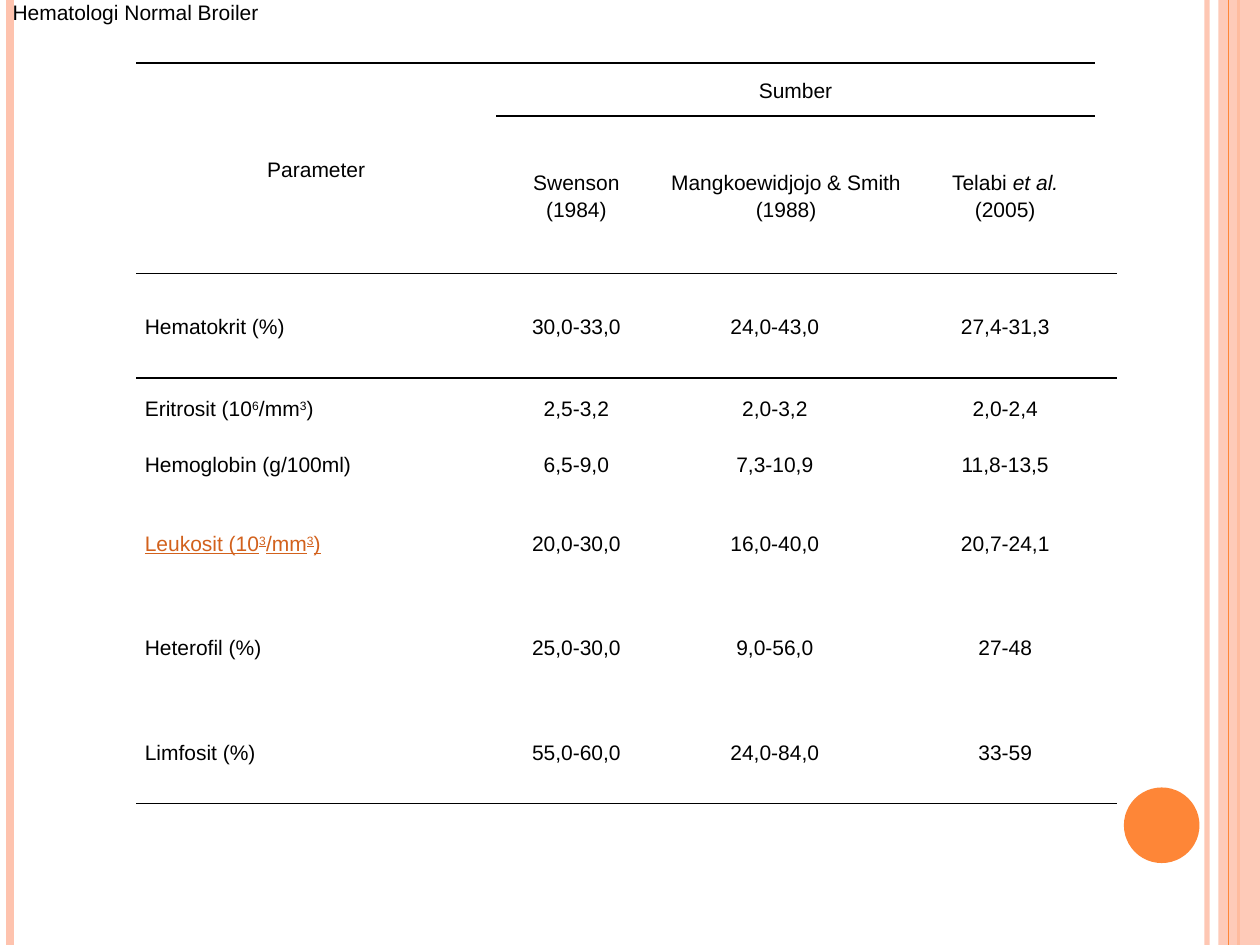
"""Build a slide with a table of normal broiler blood values."""
from typing import Any, NamedTuple

import lxml.etree
import pptx
import pptx.dml.color
import pptx.enum.shapes
import pptx.enum.text
import pptx.oxml.ns
import pptx.util

Inches = pptx.util.Inches
Pt = pptx.util.Pt
Color = pptx.dml.color.RGBColor
Shape = pptx.enum.shapes.MSO_SHAPE
Align = pptx.enum.text.PP_ALIGN
Anchor = pptx.enum.text.MSO_ANCHOR
qn = pptx.oxml.ns.qn

BLACK = Color(0x00, 0x00, 0x00)
PEACH = Color(0xFE, 0xC3, 0xAE)
ORANGE = Color(0xFE, 0x86, 0x37)
RUST = Color(0xD2, 0x61, 0x1C)
PLAIN = "{2D5ABB26-0587-4C30-8999-92F81FD0307C}"


class Stripe(NamedTuple):
    x: float
    width: float
    color: Color
    alpha: int = 100


class Piece(NamedTuple):
    text: str
    italic: bool = False
    raised: bool = False


class Entry(NamedTuple):
    row: int
    col: int
    label: tuple[Piece, ...]
    down: int = 1
    across: int = 1
    accent: bool = False


def plain(text: str) -> tuple[Piece, ...]:
    return (Piece(text),)


def count(name: str, power: str) -> tuple[Piece, ...]:
    return (Piece(f"{name} (10"), Piece(power, raised=True), Piece("/mm"),
            Piece("3", raised=True), Piece(")"))


STRIPES = (
    Stripe(9.58, 3, PEACH, 93),
    Stripe(0.08, 4.5, PEACH),
    Stripe(9.83, 1.5, ORANGE),
    Stripe(9.75, 0.75, ORANGE),
)
WIDTHS = (2.86, 1.27, 1.88, 0.16, 1.42, 0.16)
HEIGHTS = (0.42, 1.25, 0.83, 0.47, 0.42, 0.83, 0.83, 0.83, 0.38)
HEADS = (
    Entry(0, 0, plain("Parameter"), down=2),
    Entry(0, 1, plain("Sumber"), across=4),
    Entry(1, 1, plain("Swenson (1984)")),
    Entry(1, 2, plain("Mangkoewidjojo & Smith (1988)"), across=2),
    Entry(1, 4, (Piece("Telabi "), Piece("et al.", italic=True), Piece(" (2005)"))),
)
BODY = (
    (plain("Hematokrit (%)"), "30,0-33,0", "24,0-43,0", "27,4-31,3"),
    (count("Eritrosit", "6"), "2,5-3,2", "2,0-3,2", "2,0-2,4"),
    (plain("Hemoglobin (g/100ml)"), "6,5-9,0", "7,3-10,9", "11,8-13,5"),
    (count("Leukosit", "3"), "20,0-30,0", "16,0-40,0", "20,7-24,1"),
    (plain("Heterofil (%)"), "25,0-30,0", "9,0-56,0", "27-48"),
    (plain("Limfosit (%)"), "55,0-60,0", "24,0-84,0", "33-59"),
)
ACCENT = 3
RULES = ((0, 5), (1, 5), (2, 6), (8, 6))


def fade(item: Any, alpha: int) -> None:
    if alpha < 100:
        tint = next(item.element.spPr.iter(qn("a:srgbClr")))
        lxml.etree.SubElement(tint, qn("a:alpha")).set("val", str(alpha * 1000))


def draw_stripe(slide: Any, stripe: Stripe) -> None:
    x = Inches(stripe.x)
    line = slide.shapes.add_connector(
        pptx.enum.shapes.MSO_CONNECTOR.STRAIGHT, x, 0, x, Inches(7.5))
    line.line.color.rgb = stripe.color
    line.line.width = Pt(stripe.width)
    fade(line, stripe.alpha)
    lxml.etree.SubElement(line.element.spPr, qn("a:effectLst"))


def draw_shape(slide: Any, kind: Any, box: tuple[float, ...], color: Color,
               alpha: int = 100) -> None:
    shape = slide.shapes.add_shape(kind, *map(Inches, box))
    shape.shadow.inherit = False
    shape.fill.solid()
    shape.fill.fore_color.rgb = color
    shape.line.fill.background()
    fade(shape, alpha)


def set_font(font: Any, color: Color = BLACK) -> None:
    font.name = "Arial"
    font.size = Pt(12)
    font.color.rgb = color


def draw_title(slide: Any) -> None:
    title = slide.shapes.title
    title.left, title.top, title.width, title.height = map(Inches, (0, 0, 10, 0.5))
    frame = title.text_frame
    frame.auto_size = pptx.enum.text.MSO_AUTO_SIZE.NONE
    frame.vertical_anchor = Anchor.TOP
    frame.margin_top = 0
    frame.text = "Hematologi Normal Broiler"
    para = frame.paragraphs[0]
    para.alignment = Align.LEFT
    set_font(para.font)


def add_edge(cell: Any, side: str) -> None:
    props = cell._tc.get_or_add_tcPr()
    edge = lxml.etree.Element(qn(f"a:{side}"), w=str(Pt(1)))
    fill = lxml.etree.SubElement(edge, qn("a:solidFill"))
    lxml.etree.SubElement(fill, qn("a:srgbClr")).set("val", str(BLACK))
    props.insert(len(props.findall(qn("a:lnT"))), edge)


def write_cell(table: Any, entry: Entry) -> None:
    cell = table.cell(entry.row, entry.col)
    if entry.down * entry.across > 1:
        cell.merge(table.cell(entry.row + entry.down - 1,
                              entry.col + entry.across - 1))
    para = cell.text_frame.paragraphs[0]
    left = entry.col == 0 and entry.row > 1
    para.alignment = Align.LEFT if left else Align.CENTER
    para.line_spacing = 1.15
    para.space_after = Pt(2)
    set_font(para.font, RUST if entry.accent else BLACK)
    if entry.accent:
        para.font.underline = True
    for piece in entry.label:
        run = para.add_run()
        run.text = piece.text
        if piece.italic:
            run.font.italic = True
        if piece.raised:
            run.font._element.set("baseline", "30000")


def draw_table(slide: Any) -> None:
    frame = slide.shapes.add_table(
        len(HEIGHTS), len(WIDTHS), Inches(1.08), Inches(0.5),
        Inches(sum(WIDTHS)), Inches(sum(HEIGHTS)))
    table = frame.table
    table.first_row = table.horz_banding = False
    next(frame.element.iter(qn("a:tableStyleId"))).text = PLAIN
    for col, width in zip(table.columns, WIDTHS):
        col.width = Inches(width)
    for row, height in zip(table.rows, HEIGHTS):
        row.height = Inches(height)
    for cell in table.iter_cells():
        cell.fill.background()
        cell.vertical_anchor = Anchor.MIDDLE
        cell.margin_left = cell.margin_right = Inches(0.07)
        cell.margin_top = cell.margin_bottom = 0
    for row, span in RULES:
        for col in range(span):
            add_edge(table.cell(row, col), "lnT")
            if row:
                add_edge(table.cell(row - 1, col), "lnB")
    for head in HEADS:
        write_cell(table, head)
    for i, (label, *values) in enumerate(BODY):
        write_cell(table, Entry(i + 2, 0, label, accent=i == ACCENT))
        for col, value in enumerate(values, 1):
            write_cell(table, Entry(i + 2, col, plain(value),
                                    across=3 if col == 3 else 1))


def main() -> None:
    deck = pptx.Presentation()
    deck.slide_width, deck.slide_height = Inches(10), Inches(7.5)
    slide = deck.slides.add_slide(deck.slide_layouts[5])
    for stripe in STRIPES[:3]:
        draw_stripe(slide, stripe)
    draw_shape(slide, Shape.RECTANGLE, (9.67, 0, 0.33, 7.5), PEACH, 87)
    draw_stripe(slide, STRIPES[3])
    draw_shape(slide, Shape.OVAL, (8.92, 6.25, 0.6, 0.6), ORANGE)
    draw_table(slide)
    draw_title(slide)
    deck.save("out.pptx")


if __name__ == "__main__":
    main()
